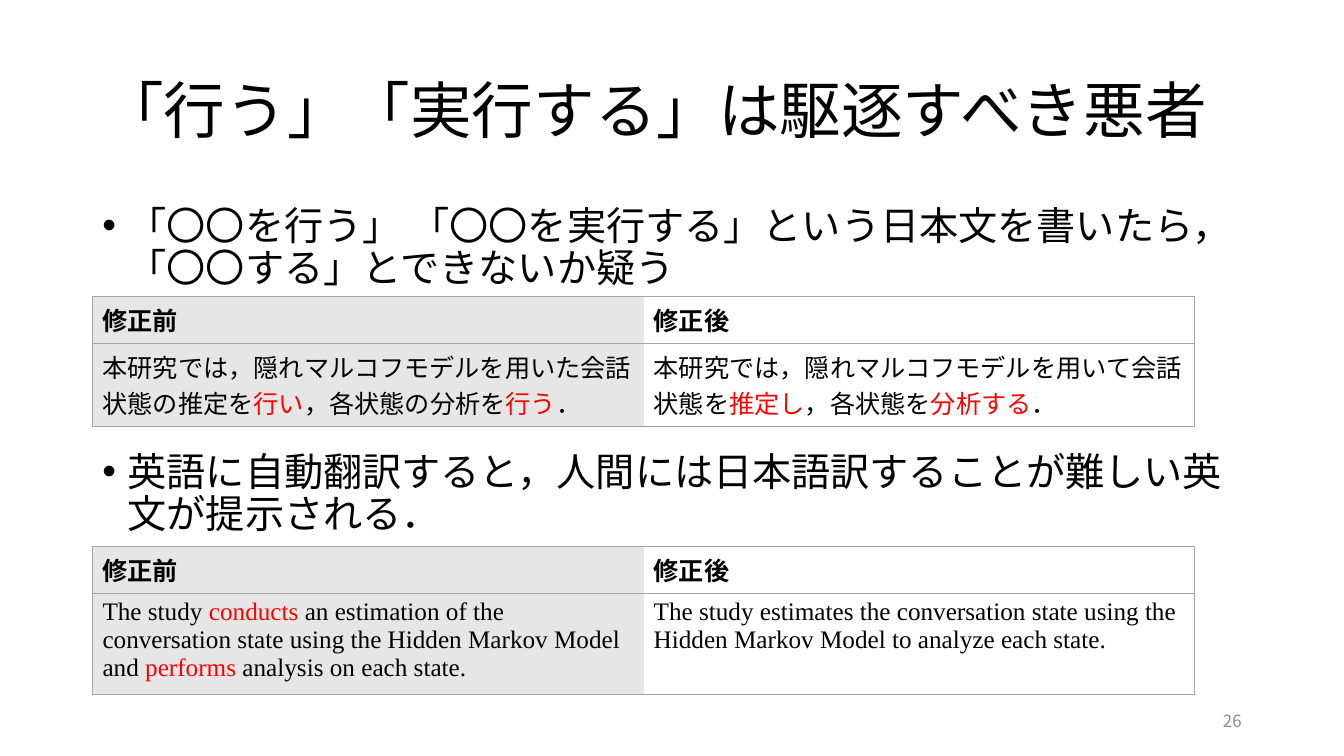
from lxml import etree
from pptx import Presentation
from pptx import util as u
from pptx.dml.color import RGBColor
from pptx.enum import lang, text
from pptx.oxml.ns import qn

COLORS = {"ink": "000000", "accent": "FF0000", "number": "8C8C8C",
          "before": "E7E6E6", "after": "FFFFFF", "border": "A5A5A5"}
GOTHIC, SERIF = "Noto Sans CJK JP", "Times New Roman"
LEFT, WIDTH = 2.33, 29.21
TABLE_WIDTH = 27.78


class Page:
    def __init__(self, deck):
        self.slide = deck.slides.add_slide(deck.slide_layouts[6])

    def span(self, para, words, size, font=GOTHIC, color="ink", bold=False):
        run = para.add_run()
        run.text = words
        run.font.size = u.Pt(size)
        run.font.bold = bold
        run.font.color.rgb = RGBColor.from_string(COLORS[color])
        run.font.name = font
        run.font.language_id = lang.MSO_LANGUAGE_ID.JAPANESE
        east_asian = etree.SubElement(run.font._element, qn("a:ea"))
        east_asian.set("typeface", GOTHIC)

    def text(self, words, place, size, color="ink", anchor=text.MSO_ANCHOR.MIDDLE,
             align=text.PP_ALIGN.LEFT, spacing=0.9):
        box = self.slide.shapes.add_textbox(*map(u.Cm, place))
        box.text_frame.word_wrap = True
        box.text_frame.vertical_anchor = anchor
        para = box.text_frame.paragraphs[0]
        para.alignment = align
        para.line_spacing = spacing
        self.span(para, words, size, color=color)
        return para

    def bullet(self, words, top):
        para = self.text(words, (LEFT, top, WIDTH, 2.4), 28, anchor=text.MSO_ANCHOR.TOP)
        para.space_before = u.Pt(10)
        props = para._p.get_or_add_pPr()
        props.set("marL", str(u.Cm(0.64)))
        props.set("indent", str(u.Cm(-0.64)))
        etree.SubElement(props, qn("a:buFont")).set("typeface", "Arial")
        etree.SubElement(props, qn("a:buChar")).set("char", "•")

    def borders(self, cell, sides):
        """Draw the named sides (of L, R, T, B) and hide the others."""
        props = cell._tc.get_or_add_tcPr()
        for index, side in enumerate("LRTB"):
            line = etree.Element(qn(f"a:ln{side}"), w=str(u.Pt(0.5)))
            if side in sides:
                fill = etree.SubElement(line, qn("a:solidFill"))
                etree.SubElement(fill, qn("a:srgbClr")).set("val", COLORS["border"])
            else:
                etree.SubElement(line, qn("a:noFill"))
            props.insert(index, line)

    def comparison(self, top, heights, font, before, after):
        """Two-column table; every second part of a sentence is highlighted."""
        frame = self.slide.shapes.add_table(
            2, 2, u.Cm(LEFT), u.Cm(top), u.Cm(TABLE_WIDTH), u.Cm(sum(heights)))
        table = frame.table
        table.first_row = table.horz_banding = False
        for row, height in zip(table.rows, heights):
            row.height = u.Cm(height)
        columns = (("before", "修正前", before, "L"), ("after", "修正後", after, "R"))
        for col, (fill, heading, sentence, edge) in enumerate(columns):
            for row, parts in enumerate(([heading], sentence)):
                cell = table.cell(row, col)
                cell.fill.solid()
                cell.fill.fore_color.rgb = RGBColor.from_string(COLORS[fill])
                self.borders(cell, edge + "TB")
                para = cell.text_frame.paragraphs[0]
                for number, part in enumerate(parts):
                    self.span(para, part, 18, font, "accent" if number % 2 else "ink",
                              bold=row == 0)


def main():
    deck = Presentation()
    deck.slide_width, deck.slide_height = u.Cm(33.87), u.Cm(19.05)
    page = Page(deck)
    page.text("「行う」「実行する」は駆逐すべき悪者", (LEFT, 1.01, WIDTH, 3.68), 44)
    page.bullet("「〇〇を行う」 「〇〇を実行する」という日本文を書いたら，"
                "「〇〇する」とできないか疑う", 5.07)
    page.comparison(
        7.46, (1.18, 2.1), GOTHIC,
        ["本研究では，隠れマルコフモデルを用いた会話状態の推定を", "行い",
         "，各状態の分析を", "行う", "．"],
        ["本研究では，隠れマルコフモデルを用いて会話状態を", "推定し",
         "，各状態を", "分析する", "．"])
    page.bullet("英語に自動翻訳すると，人間には日本語訳することが難しい英文が提示される．", 11.27)
    page.comparison(
        13.77, (1.18, 2.36), SERIF,
        ["The study ", "conducts",
         " an estimation of the conversation state using the Hidden Markov Model and ",
         "performs", " analysis on each state."],
        ["The study estimates the conversation state using the Hidden Markov Model "
         "to analyze each state."])
    page.text("26", (23.92, 17.66, 7.62, 1.01), 12, "number",
              align=text.PP_ALIGN.RIGHT, spacing=1.0)
    deck.save("out.pptx")


if __name__ == "__main__":
    main()
